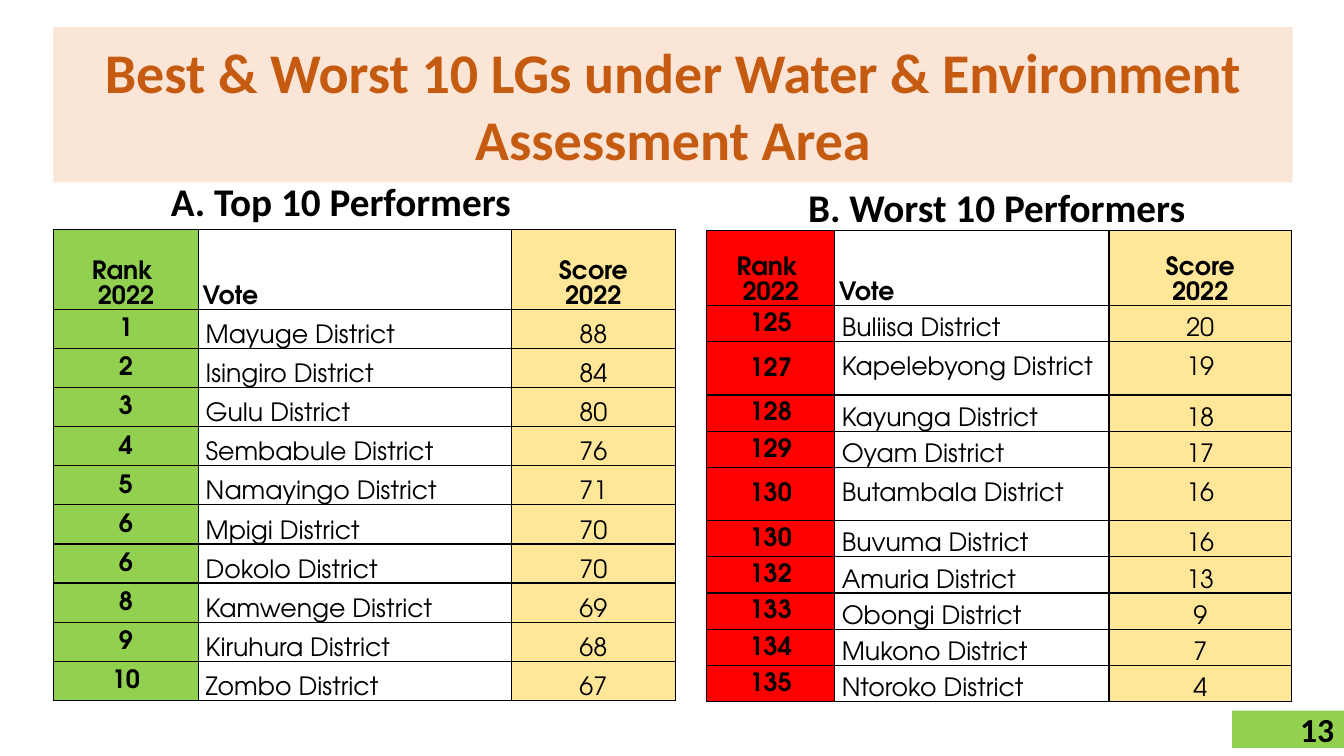
from dataclasses import dataclass

from lxml import etree
from pptx import Presentation
from pptx.dml.color import RGBColor
from pptx.enum.shapes import MSO_SHAPE
from pptx.enum.text import MSO_ANCHOR, MSO_AUTO_SIZE, PP_ALIGN
from pptx.oxml.ns import qn
from pptx.util import Inches, Pt

LEFT, CENTER, RIGHT = PP_ALIGN.LEFT, PP_ALIGN.CENTER, PP_ALIGN.RIGHT
MIDDLE, BOTTOM = MSO_ANCHOR.MIDDLE, MSO_ANCHOR.BOTTOM
RECTANGLE = MSO_SHAPE.RECTANGLE
NO_AUTOFIT = MSO_AUTO_SIZE.NONE
COMPARISON_LAYOUT = 4


@dataclass(frozen=True)
class Theme:
    """Colours, fonts and type sizes of the slide."""
    title_fill: str = "FBE5D6"
    title_text: str = "C55A11"
    text: str = "000000"
    best: str = "92D050"
    worst: str = "FF0000"
    vote: str = "FFFFFF"
    score: str = "FFE699"
    font: str = "Calibri"
    table_font: str = "TeX Gyre Adventor"
    title_size: int = 40
    heading_size: int = 28
    number_size: int = 24
    table_size: int = 18
    border_width: int = 1


THEME = Theme()

HEADER = ("Rank \n2022", "Vote", "Score\n2022")
TOP_PERFORMERS = [
    ("1", "Mayuge District", "88"),
    ("2", "Isingiro District", "84"),
    ("3", "Gulu District", "80"),
    ("4", "Sembabule District", "76"),
    ("5", "Namayingo District", "71"),
    ("6", "Mpigi District", "70"),
    ("6", "Dokolo District", "70"),
    ("8", "Kamwenge District", "69"),
    ("9", "Kiruhura District", "68"),
    ("10", "Zombo District", "67"),
]
WORST_PERFORMERS = [
    ("125", "Buliisa District", "20"),
    ("127", "Kapelebyong District", "19"),
    ("128", "Kayunga District", "18"),
    ("129", "Oyam District", "17"),
    ("130", "Butambala District", "16"),
    ("130", "Buvuma District", "16"),
    ("132", "Amuria District", "13"),
    ("133", "Obongi District", "9"),
    ("134", "Mukono District", "7"),
    ("135", "Ntoroko District", "4"),
]
TALL_ROW = 0.53


def place(shape, box):
    """Move and size a shape to a box given in inches."""
    shape.left, shape.top, shape.width, shape.height = map(Inches, box)


def fill_solid(target, colour):
    """Fill a shape or cell with one colour."""
    target.fill.solid()
    target.fill.fore_color.rgb = RGBColor.from_string(colour)


def write(text_frame, text, size, align, colour=THEME.text, font=THEME.font,
          bold=True, line_spacing=1.0, space_before=0):
    """Set the text of a frame and format its paragraphs and runs."""
    text_frame.text = text
    for paragraph in text_frame.paragraphs:
        paragraph.alignment = align
        paragraph.line_spacing = line_spacing
        paragraph.space_before = Pt(space_before)
        for run in paragraph.runs:
            run.font.name = font
            run.font.size = Pt(size)
            run.font.bold = bold
            run.font.color.rgb = RGBColor.from_string(colour)


def add_title(slide, box, text):
    """Put the title on its tinted band."""
    title = slide.shapes.title
    place(title, box)
    fill_solid(title, THEME.title_fill)
    write(title.text_frame, text, THEME.title_size, CENTER, THEME.title_text)
    title.text_frame.vertical_anchor = MIDDLE
    title.text_frame.auto_size = NO_AUTOFIT


def add_heading(placeholder, box, text):
    """Put a table heading in a body placeholder."""
    place(placeholder, box)
    write(placeholder.text_frame, text, THEME.heading_size, CENTER,
          line_spacing=0.9, space_before=10)
    placeholder.text_frame.vertical_anchor = BOTTOM
    placeholder.text_frame.auto_size = NO_AUTOFIT


def add_borders(cell):
    """Draw a thin line on every side of a cell."""
    properties = cell._tc.get_or_add_tcPr()
    for position, side in enumerate(("a:lnL", "a:lnR", "a:lnT", "a:lnB")):
        line = etree.Element(qn(side), w=str(Pt(THEME.border_width)))
        solid = etree.SubElement(line, qn("a:solidFill"))
        etree.SubElement(solid, qn("a:srgbClr"), val=THEME.text)
        properties.insert(position, line)


def add_ranking(slide, box, widths, header_height, rows, rank_fill, tall_rows=()):
    """Build a ranking table whose ordinary rows share the remaining height."""
    table = slide.shapes.add_table(len(rows) + 1, len(HEADER), *map(Inches, box)).table
    table.first_row = table.horz_banding = False
    for column, width in zip(table.columns, widths):
        column.width = Inches(width)
    free_height = box[3] - header_height - TALL_ROW * len(tall_rows)
    row_height = free_height / (len(rows) - len(tall_rows))
    fills = (rank_fill, THEME.vote, THEME.score)
    for row_index, values in enumerate([HEADER, *rows]):
        is_header = row_index == 0
        is_tall = row_index in tall_rows
        height = header_height if is_header else TALL_ROW if is_tall else row_height
        table.rows[row_index].height = Inches(height)
        for column_index, value in enumerate(values):
            cell = table.cell(row_index, column_index)
            is_rank = column_index == 0
            cell.margin_left = cell.margin_right = Inches(0.04 if is_header else 0.07)
            cell.margin_top = cell.margin_bottom = 0
            centred = is_tall or (is_rank and not is_header)
            cell.vertical_anchor = MIDDLE if centred else BOTTOM
            fill_solid(cell, fills[column_index])
            add_borders(cell)
            write(cell.text_frame, value, THEME.table_size,
                  LEFT if column_index == 1 else CENTER, font=THEME.table_font,
                  bold=is_header or is_rank, line_spacing=1.07)


def add_page_number(slide, box, number):
    """Put the page number on a coloured tab."""
    tab = slide.shapes.add_shape(RECTANGLE, *map(Inches, box))
    tab.shadow.inherit = False
    fill_solid(tab, THEME.best)
    tab.line.fill.background()
    tab.text_frame.word_wrap = True
    tab.text_frame.vertical_anchor = MIDDLE
    write(tab.text_frame, number, THEME.number_size, RIGHT)


def build_comparison_slide(presentation):
    """Lay out the title, both headings, both tables and the page number."""
    slide = presentation.slides.add_slide(presentation.slide_layouts[COMPARISON_LAYOUT])
    _, top_heading, top_content, worst_heading, worst_content = slide.placeholders
    for content in (top_content, worst_content):
        content.element.getparent().remove(content.element)
    add_title(slide, (0.53, 0.27, 12.29, 1.54),
              "Best & Worst 10 LGs under Water & Environment Assessment Area")
    add_heading(top_heading, (0.66, 1.71, 5.53, 0.57), "A. Top 10 Performers ")
    add_heading(worst_heading, (7.12, 1.78, 5.53, 0.56), "B. Worst 10 Performers")
    add_ranking(slide, (0.53, 2.28, 6.17, 4.67), (1.44, 3.1, 1.63), 0.79,
                TOP_PERFORMERS, THEME.best)
    add_ranking(slide, (7.01, 2.29, 5.8, 4.67), (1.27, 2.72, 1.81), 0.74,
                WORST_PERFORMERS, THEME.worst, tall_rows=(2, 5))
    add_page_number(slide, (12.22, 7.05, 1.11, 0.37), "13")


def main():
    """Create the presentation and save it."""
    presentation = Presentation()
    presentation.slide_width = Inches(13.33)
    presentation.slide_height = Inches(7.5)
    build_comparison_slide(presentation)
    presentation.save("out.pptx")


if __name__ == "__main__":
    main()
